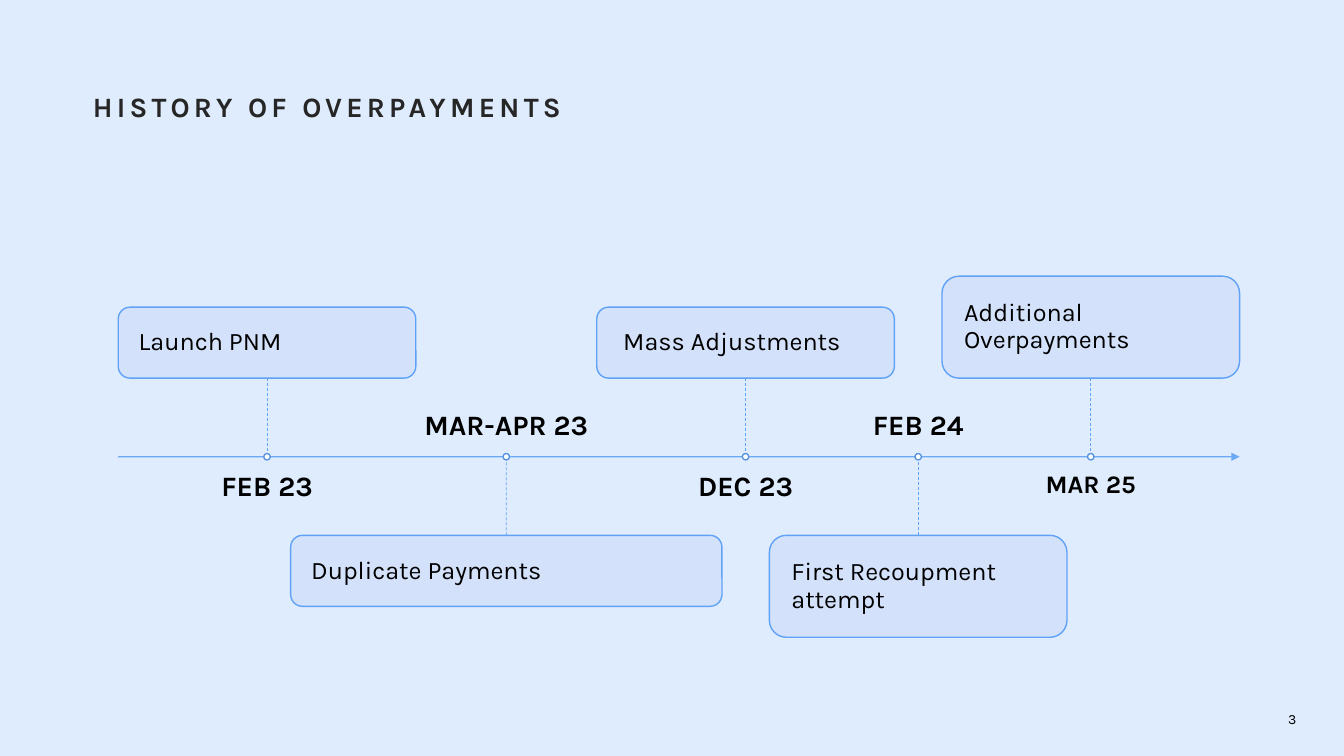
from pptx import Presentation
from pptx.dml.color import RGBColor
from pptx.enum.dml import MSO_LINE
from pptx.enum.shapes import MSO_CONNECTOR, MSO_SHAPE
from pptx.enum.text import MSO_ANCHOR as Anchor, PP_ALIGN as Align
from pptx.oxml.ns import qn
from pptx.util import Cm, Pt
from lxml.etree import SubElement

FONT = "Karla"
BLUE = "60A2F5"
TOP, BOTTOM = 0, 2  # connection sites of a rectangle

# date, date size, event, centre in cm, box width, box height, box above the axis
EVENTS = [
    ("FEB 23", 20, "Launch PNM", 6.73, 7.5, 1.79, True),
    ("MAR-APR 23", 20, "Duplicate Payments", 12.76, 10.87, 1.79, False),
    ("DEC 23", 20, " Mass Adjustments", 18.79, 7.5, 1.79, True),
    ("FEB 24", 20, "First Recoupment attempt", 23.14, 7.5, 2.57, False),
    ("MAR 25", 18, "Additional Overpayments", 27.49, 7.5, 2.57, True),
]


def color(hex_code):
    return RGBColor.from_string(hex_code)


def set_opacity(fill_parent, percent):
    """Make the solid fill directly under an element partly transparent."""
    tone = fill_parent.find(qn("a:solidFill")).find(qn("a:srgbClr"))
    SubElement(tone, qn("a:alpha")).set("val", str(percent * 1000))


def write(frame, text, size=18, bold=False, tone="000000", align=Align.LEFT,
          anchor=Anchor.TOP, inset=0, line_spacing=0.9, tracking=None):
    frame.word_wrap = True
    frame.vertical_anchor = anchor
    frame.margin_left = frame.margin_right = Cm(inset)
    frame.margin_top = frame.margin_bottom = Cm(inset)
    para = frame.paragraphs[0]
    para.alignment = align
    para.line_spacing = line_spacing
    span = para.add_run()
    span.text = text
    span.font.name = FONT
    span.font.size = Pt(size)
    span.font.bold = bold
    span.font.color.rgb = color(tone)
    if tracking:
        span._r.get_or_add_rPr().set("spc", str(tracking * 100))


def add_text(page, left, top, width, height, text, **form):
    box = page.shapes.add_textbox(Cm(left), Cm(top), Cm(width), Cm(height))
    write(box.text_frame, text, **form)


def add_panel(page, kind, left, top, width, height, fill, line):
    panel = page.shapes.add_shape(kind, Cm(left), Cm(top), Cm(width), Cm(height))
    panel.shadow.inherit = False
    panel.fill.solid()
    panel.fill.fore_color.rgb = color(fill)
    panel.line.color.rgb = color(line)
    panel.line.width = Pt(1)
    return panel


def add_line(page, x1, y1, x2, y2, weight):
    line = page.shapes.add_connector(
        MSO_CONNECTOR.STRAIGHT, Cm(x1), Cm(y1), Cm(x2), Cm(y2))
    line.line.color.rgb = color(BLUE)
    line.line.width = Pt(weight)
    SubElement(line._element.spPr, qn("a:effectLst"))
    return line


def add_axis(page, left, y, width):
    axis = add_line(page, left, y, left + width, y, 1)
    outline = axis.line._get_or_add_ln()
    set_opacity(outline, 90)
    SubElement(outline, qn("a:tailEnd")).set("type", "triangle")


def add_event(page, axis_y, date, date_size, event, center, width, height, above):
    """Place the box and the date on opposite sides of the axis."""
    stem, dot, date_width, date_height, date_gap = 1.98, 0.16, 6.6, 1.17, 0.39
    box_top = axis_y - stem - height if above else axis_y + stem
    box = add_panel(page, MSO_SHAPE.ROUNDED_RECTANGLE, center - width / 2, box_top,
                    width, height, "D2E0FB", BLUE)
    set_opacity(box._element.spPr, 90)
    write(box.text_frame, event, anchor=Anchor.MIDDLE, inset=0.43)

    link = add_line(page, center, axis_y, center, axis_y, 0.5)
    link.line.dash_style = MSO_LINE.DASH
    link.begin_connect(box, BOTTOM if above else TOP)

    date_top = axis_y + date_gap if above else axis_y - date_gap - date_height
    add_text(page, center - date_width / 2, date_top, date_width, date_height, date,
             size=date_size, bold=True, align=Align.CENTER,
             anchor=Anchor.TOP if above else Anchor.BOTTOM)
    add_panel(page, MSO_SHAPE.OVAL, center - dot / 2, axis_y - dot / 2, dot, dot,
              "FFFFFF", "5793DE")


def add_timeline(page, left, axis_y, width):
    add_axis(page, left, axis_y, width)
    for event in EVENTS:
        add_event(page, axis_y, *event)


def main():
    deck = Presentation()
    deck.slide_width, deck.slide_height = Cm(33.87), Cm(19.05)
    page = deck.slides.add_slide(deck.slide_layouts[6])
    page.background.fill.solid()
    page.background.fill.fore_color.rgb = color("DFECFD")
    add_text(page, 2.34, 2.34, 29.1, 1.55, "HISTORY OF OVERPAYMENTS",
             size=20, bold=True, tone="262626", tracking=3)
    add_timeline(page, 2.98, 11.51, 28.26)
    add_text(page, 30.33, 17.73, 2.34, 0.79, "3", size=10, align=Align.RIGHT,
             anchor=Anchor.MIDDLE, line_spacing=1.0)
    deck.save("out.pptx")


if __name__ == "__main__":
    main()
